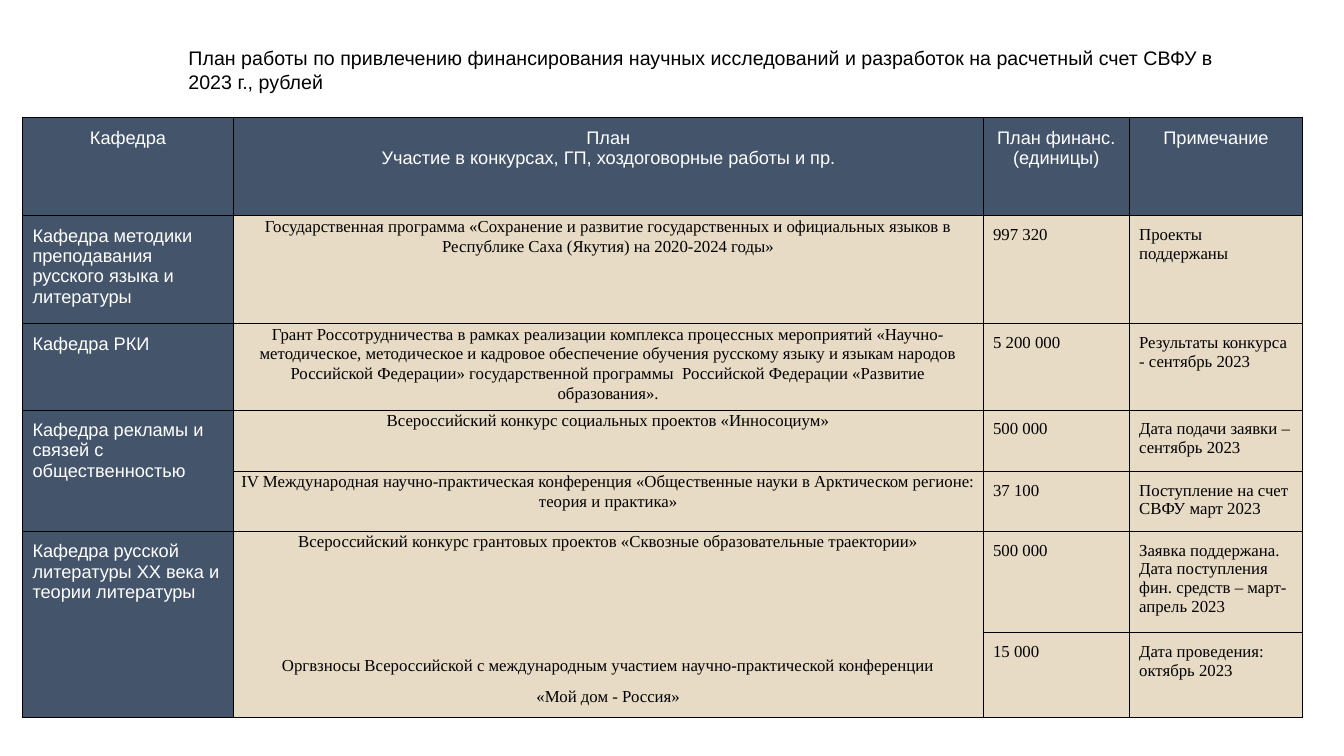
"""Build the 2023 research funding plan slide."""
from lxml import etree
from pptx import Presentation, util as u
from pptx.dml.color import RGBColor
from pptx.enum import text
from pptx.oxml import ns

COLORS = {"header": "44546A", "body": "E8DBC5", "border": "000000",
          "light": "FFFFFF", "dark": "000000"}
TITLE = ("План работы по привлечению финансирования научных исследований "
         "и разработок на расчетный счет СВФУ в 2023 г., рублей")
COLUMN_WIDTHS = [5.31, 18.9, 3.68, 4.37]
ROW_HEIGHTS = [2.47, 2.72, 2.16, 1.54, 1.51, 2.55, 2.13]
PLAN_ROWS = [
    [["Кафедра"],
     ["План", "Участие в конкурсах, ГП, хоздоговорные работы и пр."],
     ["План финанс.", "(единицы)"],
     ["Примечание"]],
    [["Кафедра методики преподавания русского языка и литературы"],
     ["Государственная программа «Сохранение и развитие государственных и "
      "официальных языков в Республике Саха (Якутия) на 2020-2024 годы»"],
     ["997 320"],
     ["Проекты поддержаны"]],
    [["Кафедра РКИ"],
     ["Грант Россотрудничества в рамках реализации комплекса процессных "
      "мероприятий «Научно-методическое, методическое и кадровое обеспечение "
      "обучения русскому языку и языкам народов Российской Федерации» "
      "государственной программы  Российской Федерации «Развитие образования»."],
     ["5 200 000"],
     ["Результаты конкурса - сентябрь 2023"]],
    [["Кафедра рекламы и связей с общественностью"],
     ["Всероссийский конкурс социальных проектов «Инносоциум»"],
     ["500 000"],
     ["Дата подачи заявки – сентябрь 2023"]],
    [[],
     ["IV Международная научно-практическая конференция «Общественные науки "
      "в Арктическом регионе: теория и практика»"],
     ["37 100"],
     ["Поступление на счет СВФУ март 2023"]],
    [["Кафедра русской литературы ХХ века и теории литературы"],
     ["Всероссийский конкурс грантовых проектов «Сквозные образовательные "
      "траектории»",
      "Оргвзносы Всероссийской с международным участием "
      "научно-практической конференции",
      "«Мой дом - Россия»"],
     ["500 000"],
     ["Заявка поддержана. Дата поступления фин. средств – март-апрель 2023"]],
    [[], [], ["15 000"], ["Дата проведения: октябрь 2023"]],
]
MERGES = [((3, 0), (4, 0)), ((5, 0), (6, 0)), ((5, 1), (6, 1))]
STYLES = {
    "header": dict(size=13, font="Arial", color="light", centered=True),
    "department": dict(size=13, font="Arial", color="light"),
    "plan": dict(size=12, font="Times New Roman", centered=True,
                 line_spacing=1.07, space_after=8),
    "detail": dict(size=12, font="Times New Roman"),
}


def write(frame, lines, size, font, color="dark", centered=False,
          line_spacing=None, space_after=None):
    """Fill a text frame with one formatted paragraph per line."""
    for index, line in enumerate(lines):
        paragraph = frame.paragraphs[0] if index == 0 else frame.add_paragraph()
        paragraph.alignment = text.PP_ALIGN.CENTER if centered else text.PP_ALIGN.LEFT
        if line_spacing:
            paragraph.line_spacing = line_spacing
        if space_after:
            paragraph.space_after = u.Pt(space_after)
        run = paragraph.add_run()
        run.text = line
        run.font.size = u.Pt(size)
        run.font.name = font
        run.font.color.rgb = RGBColor.from_string(COLORS[color])


def draw_borders(cell):
    """Outline all four sides of a table cell."""
    properties = cell._tc.get_or_add_tcPr()
    for index, side in enumerate(("lnL", "lnR", "lnT", "lnB")):
        border = etree.Element(ns.qn(f"a:{side}"), w=str(u.Pt(0.75)))
        fill = etree.SubElement(border, ns.qn("a:solidFill"))
        etree.SubElement(fill, ns.qn("a:srgbClr"), val=COLORS["border"])
        properties.insert(index, border)


def add_title(slide, left, top, width, height):
    """Place the heading in the given box."""
    heading = slide.shapes.add_textbox(*map(u.Cm, (left, top, width, height)))
    heading.text_frame.word_wrap = True
    write(heading.text_frame, [TITLE], size=14, font="Arial")


def style_name(row, column):
    """Pick the text style for a table position."""
    if row == 0:
        return "header"
    return {0: "department", 1: "plan"}.get(column, "detail")


def add_plan_table(slide, left, top, width, height):
    """Place the funding table in the given box, keeping its proportions."""
    plan = slide.shapes.add_table(
        len(ROW_HEIGHTS), len(COLUMN_WIDTHS),
        *map(u.Cm, (left, top, width, height))).table
    plan.first_row = plan.horz_banding = False
    for column, share in zip(plan.columns, COLUMN_WIDTHS):
        column.width = u.Cm(width * share / sum(COLUMN_WIDTHS))
    for row, share in zip(plan.rows, ROW_HEIGHTS):
        row.height = u.Cm(height * share / sum(ROW_HEIGHTS))
    for start, end in MERGES:
        plan.cell(*start).merge(plan.cell(*end))
    for row, entries in enumerate(PLAN_ROWS):
        for column, lines in enumerate(entries):
            cell = plan.cell(row, column)
            style = style_name(row, column)
            shade = "header" if style in ("header", "department") else "body"
            cell.fill.solid()
            cell.fill.fore_color.rgb = RGBColor.from_string(COLORS[shade])
            side, edge = (0.18, 0) if style == "plan" else (0.25, 0.25)
            cell.margin_left = cell.margin_right = u.Cm(side)
            cell.margin_top = cell.margin_bottom = u.Cm(edge)
            draw_borders(cell)
            write(cell.text_frame, lines, **STYLES[style])
    conference_fees = plan.cell(5, 1).text_frame.paragraphs[1]
    conference_fees.space_before = u.Pt(66.5)


def main():
    """Build and save the slide."""
    deck = Presentation()
    deck.slide_width, deck.slide_height = u.Cm(33.87), u.Cm(19.05)
    slide = deck.slides.add_slide(deck.slide_layouts[6])
    add_title(slide, 4.5, 1.04, 26.37, 1.45)
    add_plan_table(slide, 0.57, 2.97, sum(COLUMN_WIDTHS), sum(ROW_HEIGHTS))
    deck.save("out.pptx")


if __name__ == "__main__":
    main()
